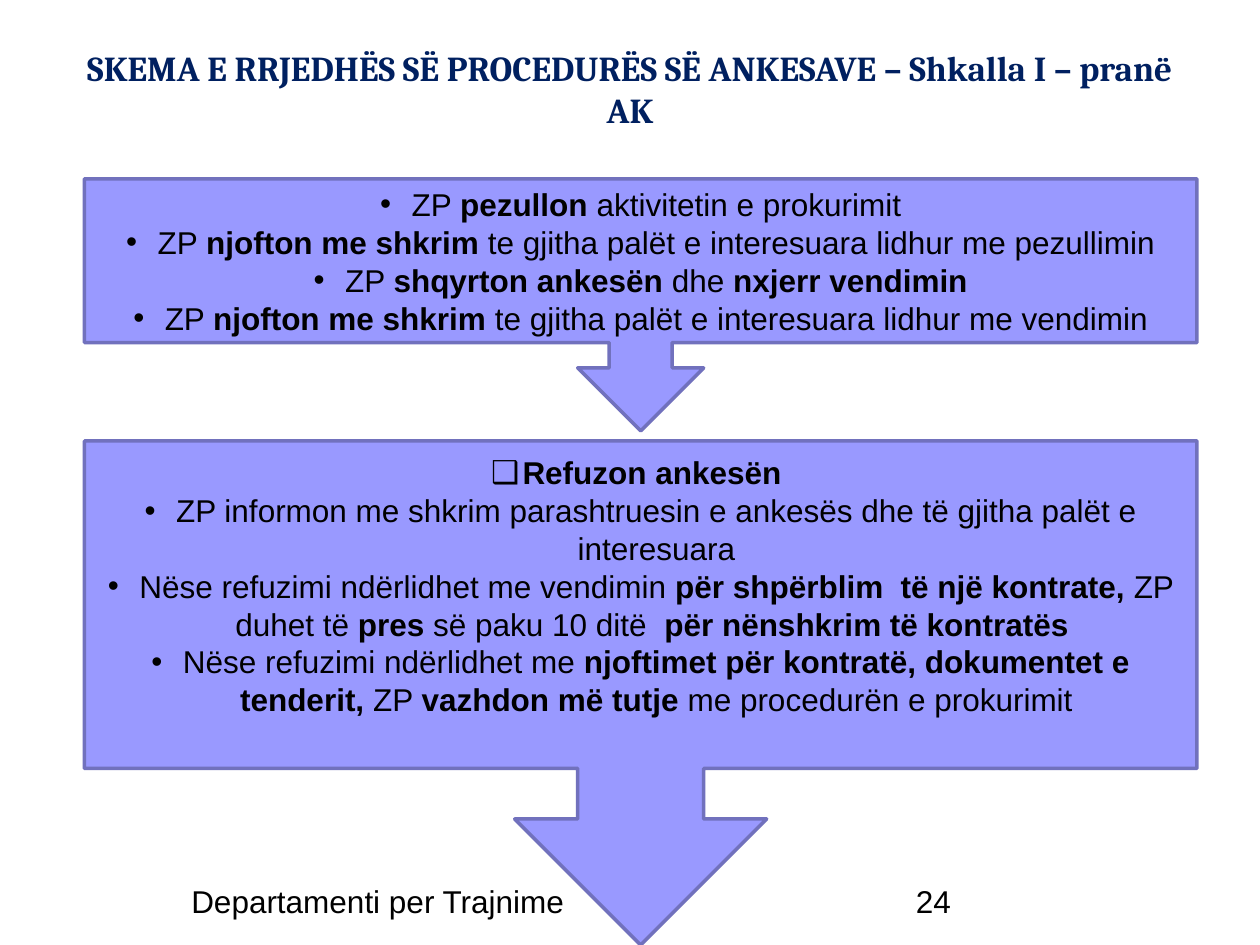
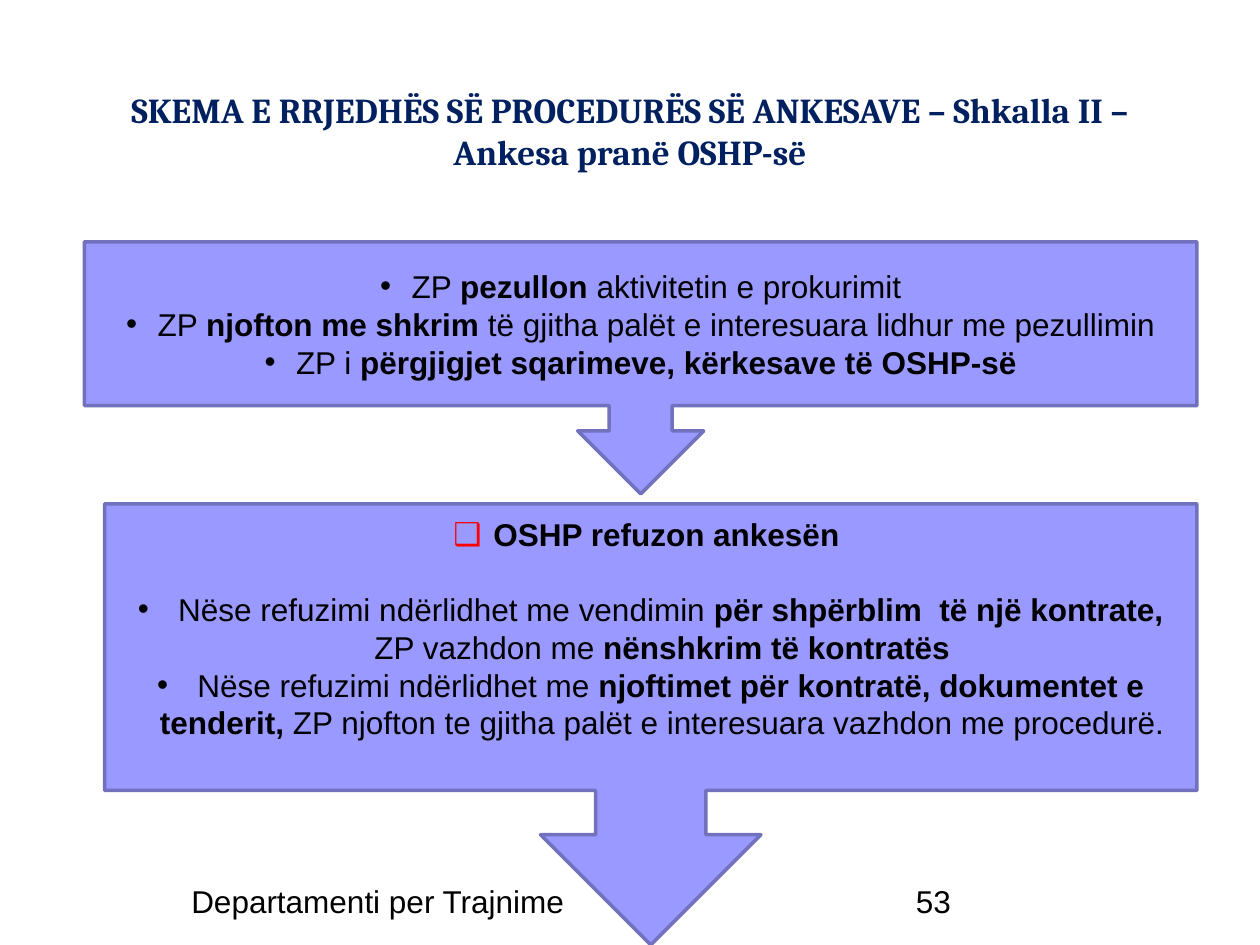
"""Build two slides showing the complaint procedure as stacked arrow callouts."""
import pptx
import pptx.util
import pptx.dml.color
import pptx.enum.shapes
import pptx.enum.text
import pptx.oxml.ns
import lxml.etree

Inches = pptx.util.Inches
Pt = pptx.util.Pt
RGB = pptx.dml.color.RGBColor.from_string
ALIGN = pptx.enum.text.PP_ALIGN
ANCHOR = pptx.enum.text.MSO_ANCHOR

THEME = {
    "title": {"name": "Cambria", "size": Pt(20), "bold": True, "color": "002060"},
    "text": {"name": "Arial", "size": Pt(18), "bold": False, "color": "000000"},
    "fill": "9999FF",
    "line": "7171BD",
    "line_width": Pt(2),
    "indent": Inches(0.25),
    "line_height": 0.3,
}
TITLE_AREA = (0.5, 0.3, 9, 1.25)
FOOTER = "Departamenti per Trajnime"
FOOTER_AREA = (1.42, 6.95, 5.17, 0.4)
NUMBER_AREA = (7.17, 6.95, 2.33, 0.4)
CALLOUT_RIGHT = 9.5

# Asterisks switch bold on and off.
PAGES = [
    {
        "title": "SKEMA E RRJEDHËS SË PROCEDURËS SË ANKESAVE – Shkalla I – pranë AK",
        "title_inset": 0.07,
        "number": "24",
        "callouts": [
            {"left": 0.67, "top": 1.42, "height": 2, "items": [
                "ZP *pezullon* aktivitetin e prokurimit",
                "ZP *njofton me shkrim* te gjitha palët e interesuara lidhur me pezullimin",
                "ZP *shqyrton ankesën* dhe *nxjerr vendimin*",
                "ZP *njofton me shkrim* te gjitha palët e interesuara lidhur me vendimin",
            ]},
            {"left": 0.67, "top": 3.5, "height": 4, "heading": "Refuzon ankesën ", "items": [
                "ZP informon me shkrim parashtruesin e ankesës dhe të gjitha palët e interesuara",
                "Nëse refuzimi ndërlidhet me vendimin *për shpërblim  të një kontrate, *"
                "ZP duhet të* pres *së paku 10 ditë  *për nënshkrim të kontratës *",
                "Nëse refuzimi ndërlidhet me* njoftimet për kontratë, dokumentet e tenderit,*"
                " ZP *vazhdon më tutje* me procedurën e prokurimit",
            ]},
        ],
    },
    {
        "title": "SKEMA E RRJEDHËS SË PROCEDURËS SË ANKESAVE – Shkalla II – "
                 "Ankesa pranë OSHP-së",
        "title_inset": 0.4,
        "number": "53",
        "callouts": [
            {"left": 0.67, "top": 1.92, "height": 2, "items": [
                "ZP *pezullon* aktivitetin e prokurimit",
                "ZP *njofton me shkrim* të gjitha palët e interesuara lidhur me pezullimin",
                "ZP i *përgjigjet sqarimeve, kërkesave të OSHP-së*",
            ]},
            {"left": 0.83, "top": 4, "height": 3.5, "heading": " OSHP refuzon ankesën ",
             "mark_color": "FF0000", "heading_gap": Pt(21), "items": [
                " Nëse refuzimi ndërlidhet me vendimin *për shpërblim  të një kontrate, *"
                "ZP vazhdon me* nënshkrim të kontratës *",
                " Nëse refuzimi ndërlidhet me* njoftimet për kontratë, dokumentet e tenderit,*"
                " ZP njofton te gjitha palët e interesuara vazhdon me procedurë. ",
            ]},
        ],
    },
]


def apply(target, values):
    for name, value in values.items():
        setattr(target, name, value)


def add_span(para, text, style, **changes):
    span = para.add_run()
    span.text = text
    values = {**style, **changes}
    span.font.color.rgb = RGB(values.pop("color"))
    apply(span.font, values)


def add_bullet(para, mark, color):
    props = para._p.get_or_add_pPr()
    props.set("marL", str(THEME["indent"]))
    props.set("indent", str(-THEME["indent"]))
    qn = pptx.oxml.ns.qn
    bullet_color = lxml.etree.SubElement(props, qn("a:buClr"))
    lxml.etree.SubElement(bullet_color, qn("a:srgbClr"), val=color)
    lxml.etree.SubElement(props, qn("a:buFont"), typeface="Arial")
    lxml.etree.SubElement(props, qn("a:buChar"), char=mark)


def add_title(page, text, inset):
    box = page.shapes.title
    apply(box, dict(zip(("left", "top", "width", "height"), map(Inches, TITLE_AREA))))
    apply(box.text_frame, {
        "word_wrap": True,
        "auto_size": pptx.enum.text.MSO_AUTO_SIZE.NONE,
        "vertical_anchor": ANCHOR.TOP,
        "margin_top": Inches(inset),
    })
    para = box.text_frame.paragraphs[0]
    para.alignment = ALIGN.CENTER
    add_span(para, text, THEME["title"])


def add_callout(page, callout):
    left, top, height = (callout[key] for key in ("left", "top", "height"))
    box = page.shapes.add_shape(
        pptx.enum.shapes.MSO_SHAPE.DOWN_ARROW_CALLOUT,
        *map(Inches, (left, top, CALLOUT_RIGHT - left, height)))
    box.shadow.inherit = False
    box.fill.solid()
    box.fill.fore_color.rgb = RGB(THEME["fill"])
    box.line.color.rgb = RGB(THEME["line"])
    box.line.width = THEME["line_width"]
    frame = box.text_frame
    apply(frame, {"word_wrap": True, "vertical_anchor": ANCHOR.MIDDLE})

    color = THEME["text"]["color"]
    rows = [("•", color, item) for item in callout["items"]]
    if "heading" in callout:
        frame.margin_bottom = Inches(0.05 + THEME["line_height"])
        rows.insert(0, ("❑", callout.get("mark_color", color), f"*{callout['heading']}*"))
    for index, (mark, mark_color, text) in enumerate(rows):
        para = frame.add_paragraph() if index else frame.paragraphs[0]
        para.alignment = ALIGN.CENTER
        if index == 1 and "heading_gap" in callout:
            para.space_before = callout["heading_gap"]
        add_bullet(para, mark, mark_color)
        for part, words in enumerate(text.split("*")):
            if words:
                add_span(para, words, THEME["text"], bold=part % 2 == 1)


def add_label(page, text, area):
    box = page.shapes.add_textbox(*map(Inches, area))
    box.text_frame.word_wrap = True
    add_span(box.text_frame.paragraphs[0], text, THEME["text"])


def main():
    deck = pptx.Presentation()
    apply(deck, {"slide_width": Inches(10), "slide_height": Inches(7.5)})
    for content in PAGES:
        page = deck.slides.add_slide(deck.slide_layouts[5])
        add_title(page, content["title"], content["title_inset"])
        for callout in content["callouts"]:
            add_callout(page, callout)
        add_label(page, content["number"], NUMBER_AREA)
        add_label(page, FOOTER, FOOTER_AREA)
    deck.save("out.pptx")


if __name__ == "__main__":
    main()
